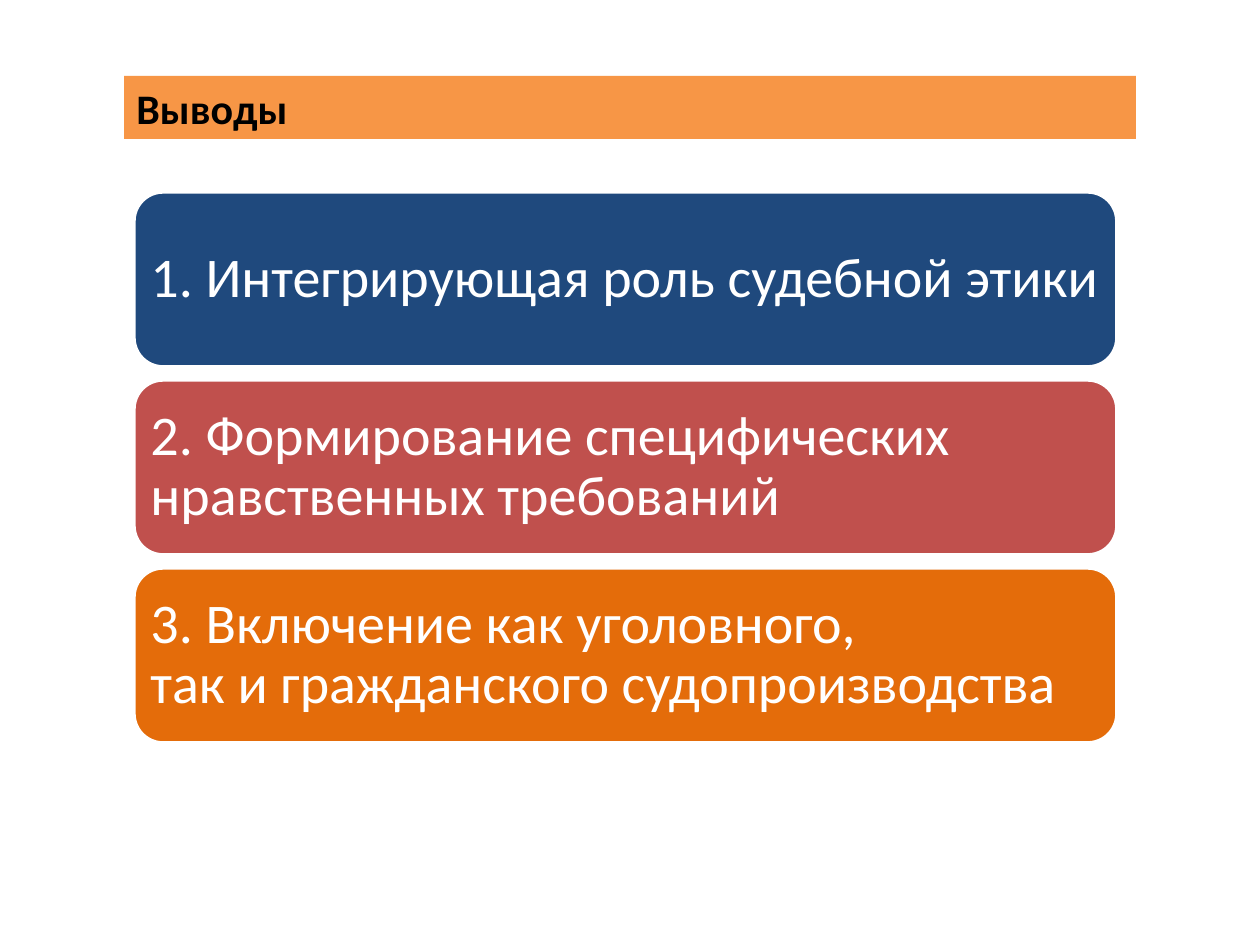
"""Build the conclusions slide: a title bar above three stacked panels."""
from pptx import Presentation
from pptx.dml.color import RGBColor
from pptx.enum.shapes import MSO_SHAPE
from pptx.enum.text import MSO_ANCHOR, MSO_AUTO_SIZE, PP_ALIGN
from pptx.util import Pt

TITLE = "Выводы"
PANELS = [
    ("1. Интегрирующая роль судебной этики", "navy"),
    ("2. Формирование специфических нравственных требований", "red"),
    ("3. Включение как уголовного, \vтак и гражданского судопроизводства", "rust"),
]
COLORS = {
    "amber": "F79646", "navy": "1F497D", "red": "C0504D",
    "rust": "E46C0A", "white": "FFFFFF", "black": "000000",
}
SCALE = 914400 / 126
SIZE = (1260, 945)
BAR = (124, 76, 1012, 63)
LEFT, TOP, WIDTH, HEIGHT, PITCH = 134, 192, 983, 175, 188
PAD = 8

BAR_FONT = {"name": "Calibri", "size": Pt(24), "bold": True}
PANEL_FONT = {"name": "Calibri", "size": Pt(32), "bold": False}
BAR_FRAME = {
    "word_wrap": True, "vertical_anchor": MSO_ANCHOR.TOP,
    "auto_size": MSO_AUTO_SIZE.SHAPE_TO_FIT_TEXT,
}
PANEL_FRAME = {"word_wrap": True, "vertical_anchor": MSO_ANCHOR.MIDDLE}
SIDES = ("left", "top", "right", "bottom")


def emu(px):
    """Turn px into EMU."""
    return round(px * SCALE)


def rgb(name):
    """Look up a colour by name."""
    return RGBColor.from_string(COLORS[name])


def apply(target, values):
    """Set each attribute in values on target."""
    for key, value in values.items():
        setattr(target, key, value)


def add_box(slide, kind, box, text, fill, ink, font, frame):
    """Add a filled shape with left-aligned text."""
    shape = slide.shapes.add_shape(kind, *map(emu, box))
    shape.shadow.inherit = False
    shape.fill.solid()
    shape.fill.fore_color.rgb = rgb(fill)
    shape.line.fill.background()
    body = shape.text_frame
    body.text = text
    apply(body, frame)
    para = body.paragraphs[0]
    para.alignment = PP_ALIGN.LEFT
    for run in para.runs:
        apply(run.font, font)
        run.font.color.rgb = rgb(ink)
    return shape


def main():
    """Draw the slide and save it."""
    deck = Presentation()
    deck.slide_width, deck.slide_height = map(emu, SIZE)
    slide = deck.slides.add_slide(deck.slide_layouts[6])
    add_box(slide, MSO_SHAPE.RECTANGLE, BAR, TITLE, "amber", "black",
            BAR_FONT, BAR_FRAME)
    margins = {f"margin_{side}": emu(PAD) for side in SIDES}
    for row, (text, fill) in enumerate(PANELS):
        box = (LEFT, TOP + row * PITCH, WIDTH, HEIGHT)
        panel = add_box(slide, MSO_SHAPE.ROUNDED_RECTANGLE, box, text, fill,
                        "white", PANEL_FONT, PANEL_FRAME | margins)
        apply(panel.line, {"width": Pt(2)})
        panel.line.color.rgb = rgb("white")
        panel.text_frame.paragraphs[0].line_spacing = 0.9
    deck.save("out.pptx")


if __name__ == "__main__":
    main()
